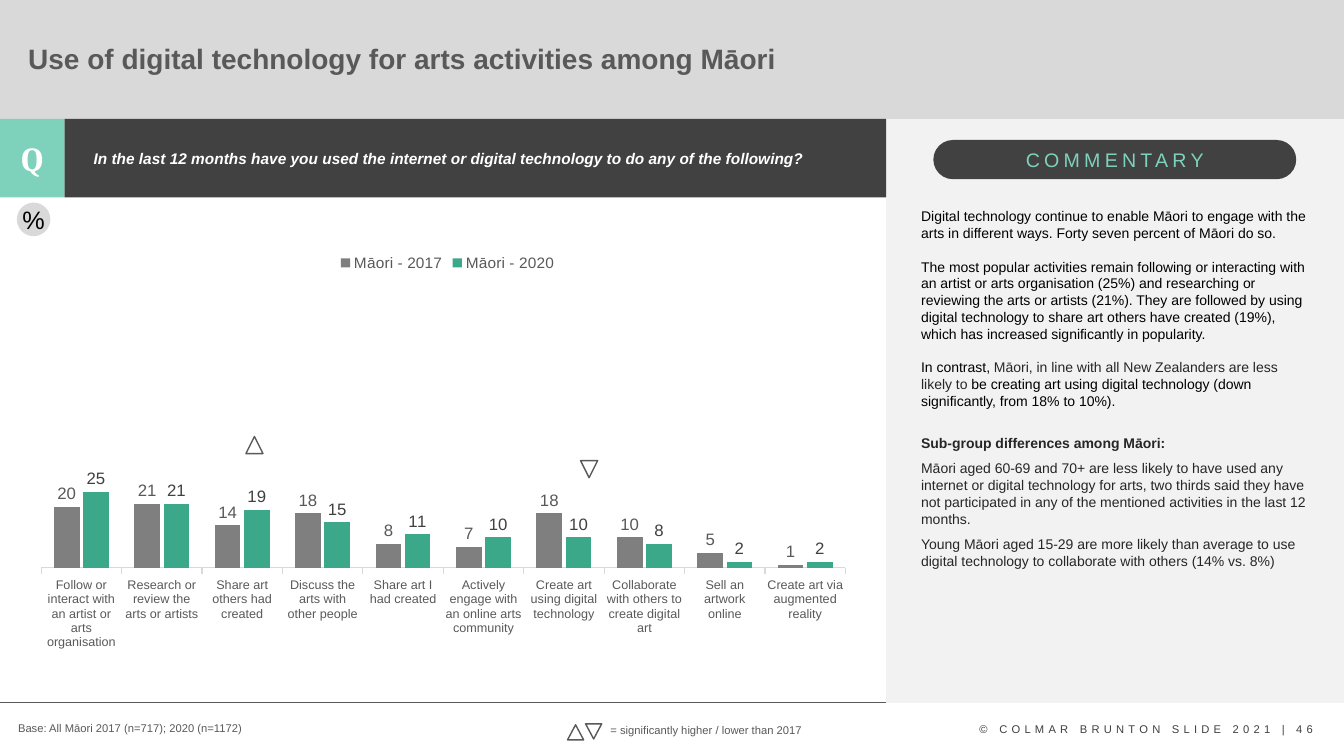
from pptx import Presentation
from pptx.chart.data import CategoryChartData
from pptx.dml.color import RGBColor
from pptx.enum.chart import XL_CHART_TYPE, XL_LABEL_POSITION, XL_LEGEND_POSITION, XL_TICK_MARK
from pptx.enum.shapes import MSO_CONNECTOR, MSO_SHAPE
from pptx.enum.text import MSO_ANCHOR, PP_ALIGN
from pptx.oxml import parse_xml
from pptx.oxml.ns import nsdecls
from pptx.util import Pt

COLOURS = {
    "white": "FFFFFF", "black": "000000", "silver": "D9D9D9", "panel": "F2F2F2",
    "charcoal": "414141", "dark": "404040", "ink": "262626", "slate": "595959",
    "mint": "7ED2BB", "grey": "7F7F7F", "green": "3AA889",
}

ACTIVITIES = [
    ("Follow or interact with an artist or arts organisation", 20, 25),
    ("Research or review the arts or artists", 21, 21),
    ("Share art others had created", 14, 19),
    ("Discuss the arts with other people", 18, 15),
    ("Share art I had created", 8, 11),
    ("Actively engage with an online arts community", 7, 10),
    ("Create art using digital technology", 18, 10),
    ("Collaborate with others to create digital art", 10, 8),
    ("Sell an artwork online", 5, 2),
    ("Create art via augmented reality", 1, 2),
]
SERIES = [("Māori - 2017", "grey", "slate"), ("Māori - 2020", "green", "dark")]

COMMENTARY = [
    (0, [("Digital technology continue to enable Māori to engage with the arts in different ways. "
          "Forty seven percent of Māori do so.", "black", False)]),
    (12, [("The most popular activities remain following or interacting with an artist or arts "
           "organisation (25%) and researching or reviewing the arts or artists (21%). They are "
           "followed by using digital technology to share art others have created (19%), which has "
           "increased significantly in popularity.", "black", False)]),
    (12, [("In contrast, ", "black", False),
          ("Māori, in line with all New Zealanders are less likely to ", "ink", False),
          ("be creating art using digital technology (down significantly, from 18% to 10%).",
           "black", False)]),
    (18, [("Sub-group differences among Māori:", "ink", True)]),
    (6, [("Māori aged 60-69 and 70+ are less likely to have used any internet or digital technology "
          "for arts, two thirds said they have not participated in any of the mentioned activities "
          "in the last 12 months.", "ink", False)]),
    (6, [("Young Māori aged 15-29 are more likely than average to use digital technology to "
          "collaborate with others (14% vs. 8%)", "ink", False)]),
]


def rgb(colour):
    return RGBColor.from_string(COLOURS[colour])


def apply(target, values):
    for name, value in values.items():
        setattr(target, name, value)


def style(font, size, colour, **extra):
    apply(font, {"name": "Arial", "size": Pt(size), **extra})
    font.color.rgb = rgb(colour)


def add_block(slide, kind, box, fill, outline=None, rotation=0):
    block = slide.shapes.add_shape(kind, *map(Pt, box))
    block.shadow.inherit = False
    block.rotation = rotation
    block.fill.solid()
    block.fill.fore_color.rgb = rgb(fill)
    if outline:
        block.line.color.rgb = rgb(outline)
        block.line.width = Pt(1)
    else:
        block.line.fill.background()
    return block


def write(paragraph, wording, size, colour, tracking=0, **extra):
    run = paragraph.add_run()
    run.text = wording
    style(run.font, size, colour, **extra)
    if tracking:
        run.font._element.set("spc", str(tracking * 100))


def label_block(block, wording, size, colour, **extra):
    apply(block.text_frame, {
        "margin_left": 0, "margin_right": 0, "margin_top": 0, "margin_bottom": 0,
        "vertical_anchor": MSO_ANCHOR.MIDDLE, "word_wrap": False})
    paragraph = block.text_frame.paragraphs[0]
    paragraph.alignment = PP_ALIGN.CENTER
    write(paragraph, wording, size, colour, **extra)


def add_text_frame(slide, box, anchor=MSO_ANCHOR.TOP, wrap=True):
    frame = slide.shapes.add_textbox(*map(Pt, box)).text_frame
    apply(frame, {"word_wrap": wrap, "vertical_anchor": anchor})
    return frame


def add_line_of_text(slide, box, wording, size, colour, anchor=MSO_ANCHOR.TOP,
                     wrap=True, spacing=1.0, **extra):
    paragraph = add_text_frame(slide, box, anchor, wrap).paragraphs[0]
    paragraph.line_spacing = spacing
    write(paragraph, wording, size, colour, **extra)


def add_rule(slide, y):
    rule = slide.shapes.add_connector(MSO_CONNECTOR.STRAIGHT, 0, Pt(y), Pt(960), Pt(y))
    rule.line.color.rgb = rgb("slate")
    rule.line.width = Pt(0.5)
    rule._element.spPr.append(parse_xml(f"<a:effectLst {nsdecls('a')}/>"))


def add_commentary(slide, box):
    frame = add_text_frame(slide, box)
    for index, (gap, pieces) in enumerate(COMMENTARY):
        paragraph = frame.add_paragraph() if index else frame.paragraphs[0]
        if index:
            paragraph.space_before = Pt(gap)
        for wording, colour, bold in pieces:
            write(paragraph, wording, 10, colour, bold=bold)


def place_plot(chart, layout):
    parts = "".join(f'<c:{name} val="{value}"/>' for name, value in layout.items())
    plot_area = chart._chartSpace.chart.plotArea
    for old_layout in plot_area.findall("{*}layout"):
        plot_area.remove(old_layout)
    plot_area.insert(0, parse_xml(
        f"<c:layout {nsdecls('c')}><c:manualLayout>{parts}</c:manualLayout></c:layout>"))


def add_activity_chart(slide, box):
    names, *years = zip(*ACTIVITIES)
    activity_data = CategoryChartData()
    activity_data.categories = names
    for (year, _, _), values in zip(SERIES, years):
        activity_data.add_series(year, values)
    chart = slide.shapes.add_chart(
        XL_CHART_TYPE.COLUMN_CLUSTERED, *map(Pt, box), activity_data).chart
    style(chart.font, 10, "black")
    apply(chart, {"has_title": False, "has_legend": True})
    apply(chart.legend, {"position": XL_LEGEND_POSITION.TOP, "include_in_layout": False})
    style(chart.legend.font, 11, "slate")
    apply(chart.value_axis, {"visible": False, "minimum_scale": 0, "maximum_scale": 100,
                             "has_major_gridlines": False})
    activity_axis = chart.category_axis
    activity_axis.major_tick_mark = XL_TICK_MARK.OUTSIDE
    style(activity_axis.tick_labels.font, 9, "slate")
    activity_axis.format.line.color.rgb = rgb("silver")
    activity_axis.format.line.width = Pt(0.75)
    apply(chart.plots[0], {"gap_width": 100, "overlap": -14, "vary_by_categories": False})
    for series, (_, fill, label_colour) in zip(chart.plots[0].series, SERIES):
        series.format.fill.solid()
        series.format.fill.fore_color.rgb = rgb(fill)
        apply(series.data_labels, {"show_value": True, "position": XL_LABEL_POSITION.OUTSIDE_END})
        style(series.data_labels.font, 12, label_colour)
    place_plot(chart, {"layoutTarget": "inner", "xMode": "edge", "yMode": "edge",
                       "x": 0.02, "y": 0.05, "w": 0.95, "h": 0.76})


def add_frame(slide):
    add_block(slide, MSO_SHAPE.RECTANGLE, (0, 0, 960, 85), "silver")
    add_line_of_text(slide, (692.6, 512.6, 260, 17.3), "© COLMAR BRUNTON SLIDE 2021 | 46",
                     8, "dark", tracking=3)
    add_rule(slide, 502)
    add_block(slide, MSO_SHAPE.RECTANGLE, (633, 85, 327, 417), "panel")
    add_block(slide, MSO_SHAPE.RECTANGLE, (46, 85, 587, 56), "charcoal")
    question_mark = add_block(slide, MSO_SHAPE.RECTANGLE, (0, 85, 46, 56), "mint")
    label_block(question_mark, "Q", 24, "white", name="Cambria", bold=True)
    pill = add_block(slide, MSO_SHAPE.ROUNDED_RECTANGLE, (666.7, 100, 259.2, 28), "charcoal")
    pill.adjustments[0] = 0.5
    label_block(pill, "COMMENTARY", 14, "mint", tracking=3)


def main():
    deck = Presentation()
    apply(deck, {"slide_width": Pt(960), "slide_height": Pt(540)})
    slide = deck.slides.add_slide(deck.slide_layouts[6])
    add_frame(slide)
    add_line_of_text(slide, (13, 15, 805.7, 56),
                     "Use of digital technology for arts activities among Māori",
                     20, "slate", MSO_ANCHOR.MIDDLE, spacing=0.9, bold=True)
    add_line_of_text(slide, (59.8, 104.4, 547.2, 33),
                     "In the last 12 months have you used the internet or digital technology "
                     "to do any of the following?",
                     11, "white", spacing=0.9, bold=True, italic=True)
    percent = add_block(slide, MSO_SHAPE.OVAL, (12, 144.7, 24, 24), "silver")
    label_block(percent, "%", 18, "black")
    add_activity_chart(slide, (17.3, 173.5, 604.8, 290.9))
    add_line_of_text(slide, (5.8, 512, 269.3, 17.3),
                     "Base: All Māori 2017 (n=717); 2020 (n=1172)", 8, "slate")
    add_line_of_text(slide, (429, 513.4, 153.4, 17.3),
                     "= significantly higher / lower than 2017", 8, "slate", wrap=False)
    for left, top, width, height, rotation in [
            (405.4, 517.7, 11.5, 10.8, 0), (418.3, 517, 11.5, 10.8, 180),
            (175.7, 311.8, 12.2, 12.2, 0), (414.7, 329, 12.2, 12.2, 180)]:
        add_block(slide, MSO_SHAPE.ISOSCELES_TRIANGLE, (left, top, width, height),
                  "white", "slate", rotation)
    add_commentary(slide, (650.9, 144.7, 292.3, 267.8))
    deck.save("out.pptx")


if __name__ == "__main__":
    main()
